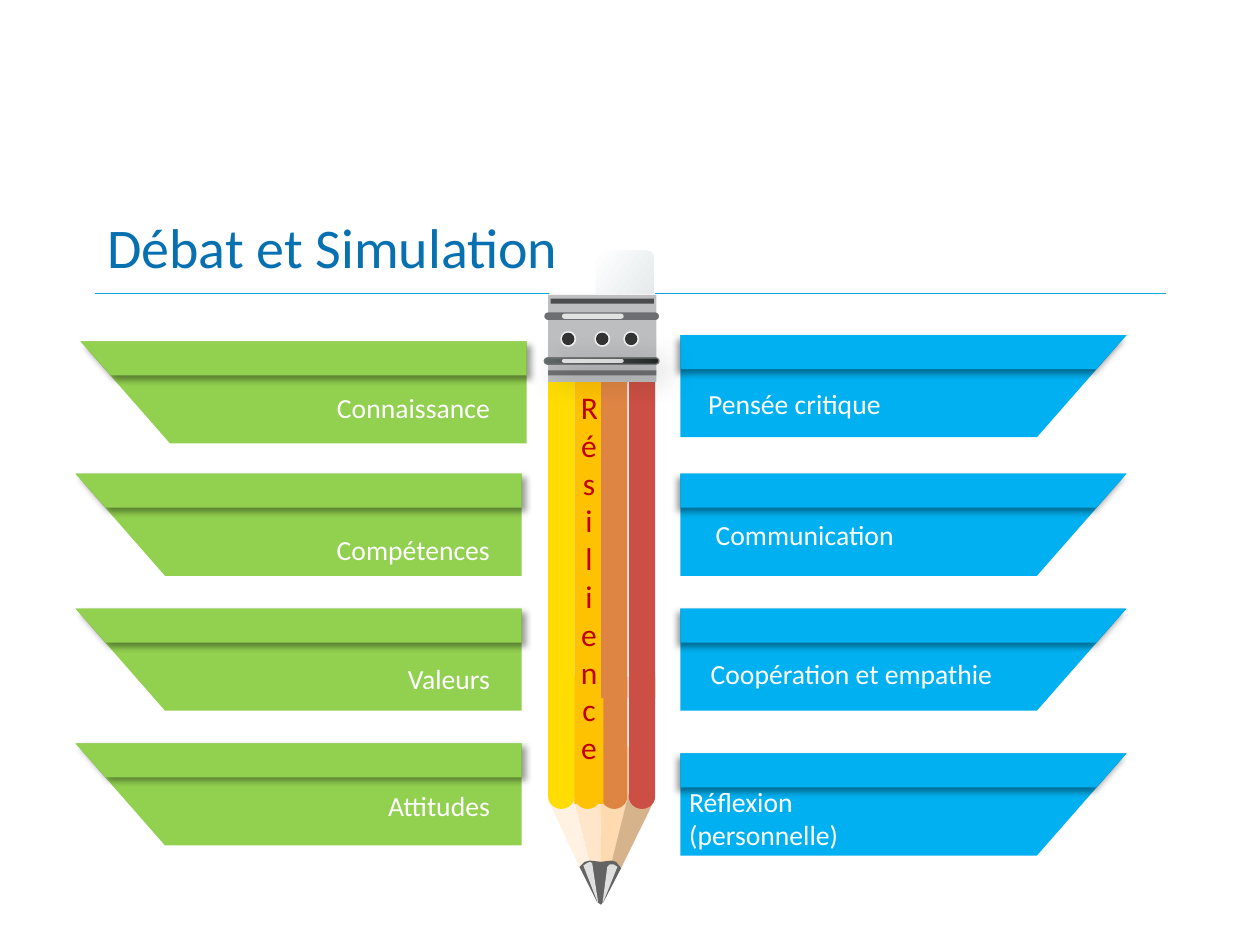
from math import cos, pi, sin
from lxml.etree import SubElement
from pptx import Presentation
from pptx.dml.color import RGBColor
from pptx.enum.shapes import MSO_CONNECTOR, MSO_SHAPE as Preset
from pptx.enum.text import MSO_ANCHOR as Anchor, MSO_AUTO_SIZE as AutoSize, PP_ALIGN as Align
from pptx.oxml.ns import qn
from pptx.util import Inches, Pt

FONT = "Calibri"
GREEN, BLUE, WHITE = "92D050", "00B0F0", "FFFFFF"
TITLE = "Débat et Simulation"
PENCIL_WORD = ["Rés", "i", "l", "ience"]

# Banners: inner edge, top
LEFT_BANNERS = [(4.18, 2.71), (4.14, 3.76), (4.14, 4.83), (4.14, 5.9)]
RIGHT_BANNERS = [(5.4, 2.66), (5.4, 3.76), (5.4, 4.83), (5.4, 5.98)]
# Labels: text, left, top, width, height
LEFT_LABELS = [
    ("Connaissance ", 1.56, 3.06, 2.42, 0.34),
    ("Compétences ", 1.56, 4.19, 2.42, 0.34),
    ("Valeurs ", 1.48, 5.21, 2.5, 0.34),
    ("Attitudes ", 1.48, 6.22, 2.5, 0.34),
]
RIGHT_LABELS = [
    ("Pensée critique", 5.58, 3.03, 1.5, 0.34),
    ("Communication", 5.64, 4.07, 2.84, 0.34),
    ("Coopération et empathie", 5.6, 5.17, 2.57, 0.34),
    ("Réflexion (personnelle)", 5.43, 6.19, 1.5, 0.6),
]

# Pencil: wood and lead facets as colour, points
FACETS = [
    ("FFE6CA", [(4.77, 6.84), (4.76, 5.92), (4.55, 5.92), (4.48, 6.06), (4.68, 6.85)]),
    ("FFDAB0", [(4.85, 6.86), (5.05, 6.06), (4.98, 5.92), (4.76, 5.92), (4.77, 6.84)]),
    ("D6B38B", [(4.93, 6.89), (5.19, 6.36), (5.05, 6.06), (4.85, 6.86)]),
    ("FFF2E3", [(4.48, 6.06), (4.35, 6.35), (4.6, 6.88), (4.64, 6.86), (4.68, 6.85)]),
    ("636363", [(4.6, 6.88), (4.74, 7.16), (4.77, 7.18), (4.79, 7.16), (4.93, 6.89),
                (4.89, 6.84), (4.85, 6.83), (4.77, 6.84), (4.68, 6.83), (4.64, 6.84)]),
]
LEAD_SHINES = [
    [(4.9, 6.88), (4.78, 7.18), (4.82, 6.88), (4.84, 6.86), (4.87, 6.86)],
    [(4.63, 6.87), (4.75, 7.18), (4.7, 6.85), (4.68, 6.84), (4.66, 6.85)],
]
# Stripes: colour, left, top, width, height of the body
STRIPES = [
    ("FFDD03", 4.35, 2.42, 0.21, 3.12),
    ("FFC203", 4.56, 2.78, 0.23, 3.6),
    ("DF8544", 4.77, 2.42, 0.21, 3.12),
    ("CB4F44", 4.99, 2.42, 0.21, 3.12),
]
# Metal parts: preset, box, format
PILL = Preset.ROUNDED_RECTANGLE
METAL = [
    (Preset.ROUND_2_SAME_RECTANGLE, (4.36, 1.97, 0.84, 0.7), {"fill": WHITE}),
    (Preset.RECTANGLE, (4.35, 2.34, 0.86, 0.69), {"fill": "BCBEC0"}),
    (PILL, (4.32, 2.48, 0.91, 0.06), {"fill": "6D6E71", "adjust": 0.5}),
    (Preset.RECTANGLE, (4.37, 2.37, 0.82, 0.04), {"fill": "000000", "alpha": 60}),
    (Preset.RECTANGLE, (4.35, 2.94, 0.86, 0.04), {"fill": "000000", "alpha": 40}),
    (PILL, (4.32, 2.84, 0.91, 0.05),
     {"fill": ("606867", "222625"), "line": "707473", "adjust": 0.5, "shadow": (19, 7.9, 45)}),
    (PILL, (4.46, 2.49, 0.49, 0.04), {"fill": WHITE, "alpha": 80, "adjust": 0.5}),
    (PILL, (4.46, 2.85, 0.49, 0.03), {"fill": WHITE, "alpha": 80, "adjust": 0.5}),
]
RIVETS = [4.51, 4.78, 5.01]
RIVET_Y = 2.69


def colour(value):
    return RGBColor.from_string(value)


def paint(shape, fill, line=None, alpha=None, shadow=None, angle=0, width=0.75, adjust=None):
    shape.shadow.inherit = False
    if isinstance(fill, tuple):
        shape.fill.gradient()
        shape.fill.gradient_angle = angle
        for stop, value, position in zip(shape.fill.gradient_stops, fill, (0, 1)):
            stop.color.rgb = colour(value)
            stop.position = position
    else:
        shape.fill.solid()
        shape.fill.fore_color.rgb = colour(fill)
    if line:
        shape.line.color.rgb = colour(line)
        shape.line.width = Pt(width)
    else:
        shape.line.fill.background()
    properties = shape.element.spPr
    if alpha:
        tone = properties.find(qn("a:solidFill"))[0]
        SubElement(tone, qn("a:alpha"), val=str(alpha * 1000))
    if shadow:
        blur, distance, direction = shadow
        outer = SubElement(properties.find(qn("a:effectLst")), qn("a:outerShdw"),
                           blurRad=str(Pt(blur)), dist=str(Pt(distance)),
                           dir=str(direction * 60000), algn="ctr", rotWithShape="0")
        tone = SubElement(outer, qn("a:srgbClr"), val="000000")
        SubElement(tone, qn("a:alpha"), val="40000")
    if adjust is not None:
        shape.adjustments[0] = adjust
    return shape


def add_preset(shapes, preset, box, **style):
    return paint(shapes.add_shape(preset, *map(Inches, box)), **style)


def add_outline(shapes, points, **style):
    corners = [(Inches(x), Inches(y)) for x, y in points]
    builder = shapes.build_freeform(*corners[0])
    builder.add_line_segments(corners[1:], close=True)
    return paint(builder.convert_to_shape(), **style)


def write(shape, lines, size=18, tone=WHITE, align=Align.LEFT, anchor=Anchor.TOP,
          insets=(0.04, 0.04), resize=AutoSize.NONE):
    frame = shape.text_frame
    frame.word_wrap = True
    frame.auto_size = resize
    frame.vertical_anchor = anchor
    frame.margin_left = frame.margin_right = Inches(insets[0])
    frame.margin_top = frame.margin_bottom = Inches(insets[1])
    for index, text in enumerate(lines):
        para = frame.add_paragraph() if index else frame.paragraphs[0]
        para.alignment = align
        span = para.add_run()
        span.text = text
        span.font.name = FONT
        span.font.size = Pt(size)
        span.font.color.rgb = colour(tone)


def add_banner(shapes, edge, top, side, fill, direction):
    group = shapes.add_group_shape().shapes
    for height, reach, shadow in ((0.81, 2.83, None), (0.27, 3.3, (4, 3, direction))):
        points = [(edge, top), (edge + side * 3.54, top),
                  (edge + side * reach, top + height), (edge, top + height)]
        add_outline(group, points, fill=fill, shadow=shadow)


def add_pencil(shapes):
    group = shapes.add_group_shape().shapes
    for fill, points in FACETS:
        add_outline(group, points, fill=fill)
    # Rounded stripe ends, then the straight bodies
    for fill, left, *_ in STRIPES:
        curve = [(left + 0.105 * (1 - cos(pi * step / 12)), 6.32 + 0.1 * sin(pi * step / 12))
                 for step in range(13)]
        add_outline(group, [(left, 5.37), *curve, (left + 0.21, 5.37)], fill=fill)
    bodies = [add_preset(group, Preset.RECTANGLE, box, fill=fill) for fill, *box in STRIPES]
    write(bodies[1], PENCIL_WORD, tone="C00000", align=Align.CENTER,
          anchor=Anchor.MIDDLE, insets=(0.05, 0.05))
    for points in LEAD_SHINES:
        add_outline(group, points, fill=WHITE, alpha=80)
    for preset, box, style in METAL:
        add_preset(group, preset, box, **style)
    for x in RIVETS:
        add_preset(group, Preset.OVAL, (x - 0.06, RIVET_Y - 0.06, 0.12, 0.12),
                   fill=WHITE, line="E6E7E8", width=0.5)
        add_preset(group, Preset.OVAL, (x - 0.05, RIVET_Y - 0.05, 0.1, 0.1),
                   fill="000000", alpha=80)
    add_preset(group, Preset.ROUND_2_SAME_RECTANGLE, (4.73, 1.99, 0.46, 0.34),
               fill=("FFFFFF", "E6EAEB"), angle=325)


def main():
    deck = Presentation()
    deck.slide_width, deck.slide_height = Inches(10), Inches(7.5)
    slide = deck.slides.add_slide(deck.slide_layouts[5])
    shapes = slide.shapes

    # Rule under the title
    rule = shapes.add_connector(MSO_CONNECTOR.STRAIGHT, *map(Inches, (0.75, 2.33, 9.25, 2.33)))
    rule.line.color.rgb = colour("0BA7DF")
    rule.line.width = Pt(0.75)
    SubElement(rule.element.spPr, qn("a:effectLst"))

    # Banners and their labels
    for banners, labels, side, fill, direction, align in (
            (LEFT_BANNERS, LEFT_LABELS, -1, GREEN, 45, Align.RIGHT),
            (RIGHT_BANNERS, RIGHT_LABELS, 1, BLUE, 129, Align.LEFT)):
        for edge, top in banners:
            add_banner(shapes, edge, top, side, fill, direction)
        for text, *box in labels:
            label = shapes.add_textbox(*map(Inches, box))
            write(label, [text], size=15.8, align=align, resize=AutoSize.SHAPE_TO_FIT_TEXT)

    add_pencil(shapes)

    # Title, in front of the pencil
    title = shapes.title
    title.left, title.top, title.width, title.height = map(Inches, (0.75, 1.58, 8.5, 0.75))
    write(title, [TITLE], size=32, tone="0770B1", anchor=Anchor.MIDDLE, insets=(0.1, 0.05))
    title.element.getparent().append(title.element)

    deck.save("out.pptx")


if __name__ == "__main__":
    main()
